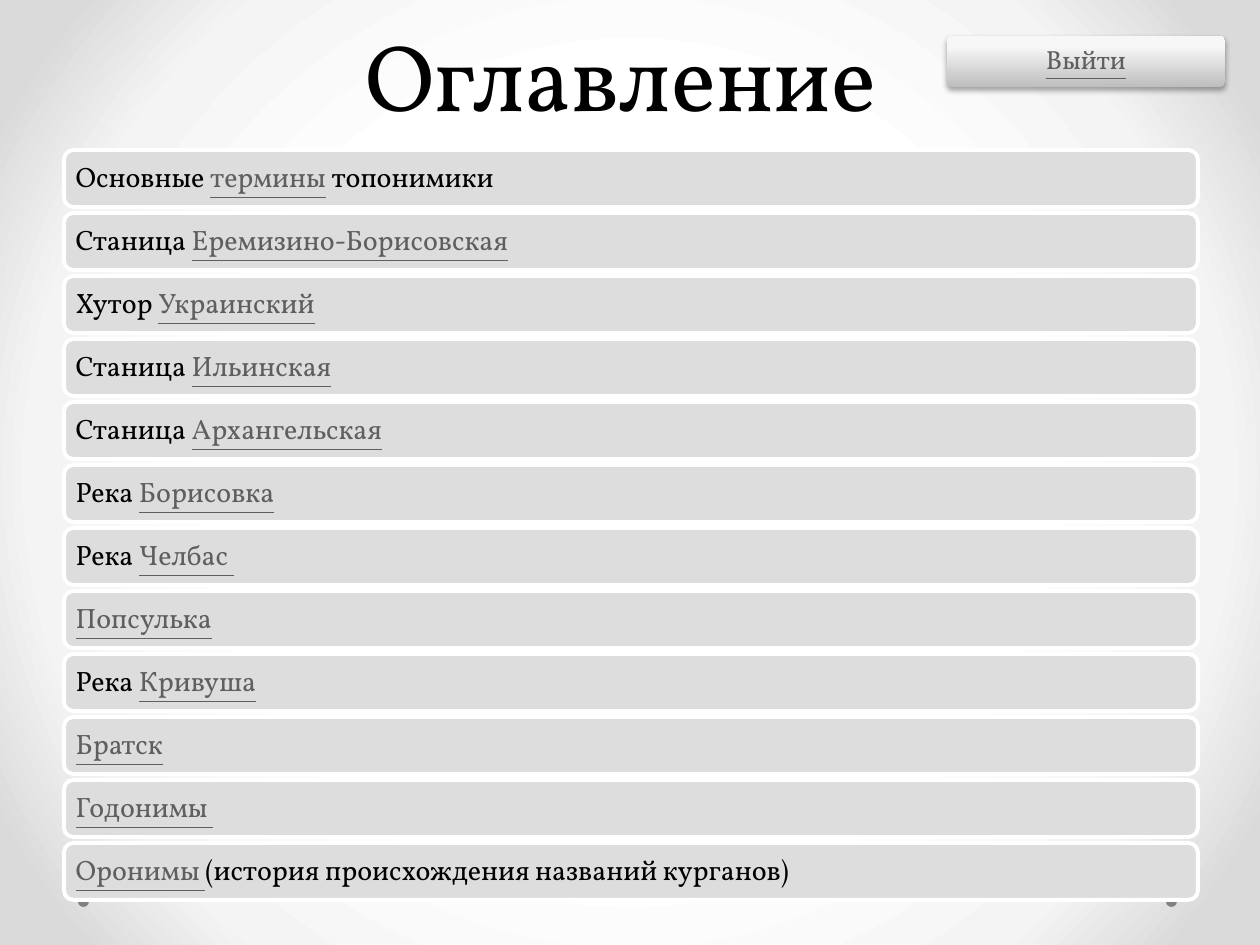
from lxml import etree
from pptx import Presentation
from pptx import util as u
from pptx.dml.color import RGBColor
from pptx.enum import shapes, text
from pptx.oxml.ns import qn

FONT = "Vollkorn"
COLORS = {"text": "000000", "link": "5F5F5F", "row": "DDDDDD", "border": "FFFFFF",
          "dot": "808080", "shadow": "000000"}
BACKGROUND_STOPS = [(50, "FFFFFF"), (76, "F4F4F4"), (92, "DADADA")]
BUTTON_STOPS = [(0, "BEBEBE"), (80, "F7F7F7"), (100, "F8F8F8")]

TITLE = "Оглавление"
EXIT = "Выйти"
# Plain text before the link, the link, plain text after it
CONTENTS = [
    ("Основные ", "термины", " топонимики"),
    ("Станица ", "Еремизино-Борисовская", ""),
    ("Хутор ", "Украинский", ""),
    ("Станица ", "Ильинская", ""),
    ("Станица ", "Архангельская", ""),
    ("Река ", "Борисовка", ""),
    ("Река ", "Челбас ", ""),
    ("", "Попсулька", ""),
    ("Река ", "Кривуша", ""),
    ("", "Братск", ""),
    ("", "Годонимы ", ""),
    ("", "Оронимы ", "(история происхождения названий курганов)"),
]

PX = 914400 // 126
LEFT, WIDTH = 64, 1134
ROW_TOP, ROW_PITCH, ROW_HEIGHT = 150, 63, 57
DOT_TOP, DOT_SIZE, DOT_LEFTS = 896, 11, (1166, 78)


def rgb(name):
    return RGBColor.from_string(COLORS[name])


def box(*lengths):
    return [u.Emu(length * PX) for length in lengths]


def set_gradient(parent, stops, direction, **attributes):
    """Replace the contents of the gradient fill found inside parent."""
    gradient = parent.find(".//" + qn("a:gradFill"))
    for child in list(gradient):
        gradient.remove(child)
    stop_list = etree.SubElement(gradient, qn("a:gsLst"))
    for position, color in stops:
        stop = etree.SubElement(stop_list, qn("a:gs"), pos=str(position * 1000))
        etree.SubElement(stop, qn("a:srgbClr"), val=color)
    return etree.SubElement(gradient, qn(direction), **attributes)


def add_plain_shape(slide, kind, *lengths):
    shape = slide.shapes.add_shape(kind, *box(*lengths))
    shape.shadow.inherit = False
    shape.line.fill.background()
    return shape


def write(shape, parts, size, alignment, margin):
    """Write (text, is_link) parts as one paragraph."""
    frame = shape.text_frame
    frame.word_wrap = True
    frame.vertical_anchor = text.MSO_ANCHOR.MIDDLE
    frame.margin_left = frame.margin_right = u.Emu(margin * PX)
    frame.margin_top = frame.margin_bottom = u.Emu(margin * PX)
    paragraph = frame.paragraphs[0]
    paragraph.alignment = alignment
    paragraph.line_spacing = 0.9
    for words, is_link in parts:
        if words:
            run = paragraph.add_run()
            run.text = words
            run.font.name = FONT
            run.font.size = u.Pt(size)
            run.font.underline = is_link
            run.font.color.rgb = rgb("link" if is_link else "text")


def add_background(slide):
    slide.background.fill.gradient()
    circle = set_gradient(slide.element, BACKGROUND_STOPS, "a:path", path="circle")
    etree.SubElement(circle, qn("a:fillToRect"), l="50000", t="50000", r="50000", b="50000")


def add_title(slide):
    frame = slide.shapes.add_textbox(*box(54, -83, WIDTH, 220)).text_frame
    frame.word_wrap = True
    frame.vertical_anchor = text.MSO_ANCHOR.BOTTOM
    paragraph = frame.paragraphs[0]
    paragraph.text = TITLE
    paragraph.alignment = text.PP_ALIGN.CENTER
    paragraph.line_spacing = u.Pt(58)
    paragraph.font.name = FONT
    paragraph.font.size = u.Pt(54)
    paragraph.font.color.rgb = rgb("text")


def add_contents(slide):
    for index, (before, link, after) in enumerate(CONTENTS):
        row = add_plain_shape(slide, shapes.MSO_SHAPE.ROUNDED_RECTANGLE,
                              LEFT, ROW_TOP + index * ROW_PITCH, WIDTH, ROW_HEIGHT)
        row.fill.solid()
        row.fill.fore_color.rgb = rgb("row")
        row.line.color.rgb = rgb("border")
        row.line.width = u.Pt(2.25)
        write(row, [(before, False), (link, True), (after, False)], 16,
              text.PP_ALIGN.LEFT, 9)


def add_exit_button(slide):
    button = add_plain_shape(slide, shapes.MSO_SHAPE.ROUNDED_RECTANGLE, 947, 36, 278, 51)
    button.adjustments[0] = 0.1
    button.fill.gradient()
    set_gradient(button.element.spPr, BUTTON_STOPS, "a:lin", ang="16200000", scaled="0")
    effects = button.element.spPr.find(qn("a:effectLst"))
    shadow = etree.SubElement(effects, qn("a:outerShdw"), blurRad=str(u.Pt(3.1)),
                              dist=str(u.Pt(1.8)), dir="5400000", rotWithShape="0")
    color = etree.SubElement(shadow, qn("a:srgbClr"), val=COLORS["shadow"])
    etree.SubElement(color, qn("a:alpha"), val="35000")
    write(button, [(EXIT, True)], 15, text.PP_ALIGN.CENTER, 8)


def main():
    presentation = Presentation()
    presentation.slide_width, presentation.slide_height = box(1260, 945)
    slide = presentation.slides.add_slide(presentation.slide_layouts[6])
    add_background(slide)
    for left in DOT_LEFTS:
        dot = add_plain_shape(slide, shapes.MSO_SHAPE.OVAL, left, DOT_TOP, DOT_SIZE, DOT_SIZE)
        dot.fill.solid()
        dot.fill.fore_color.rgb = rgb("dot")
    add_title(slide)
    add_contents(slide)
    add_exit_button(slide)
    presentation.save("out.pptx")


if __name__ == "__main__":
    main()
